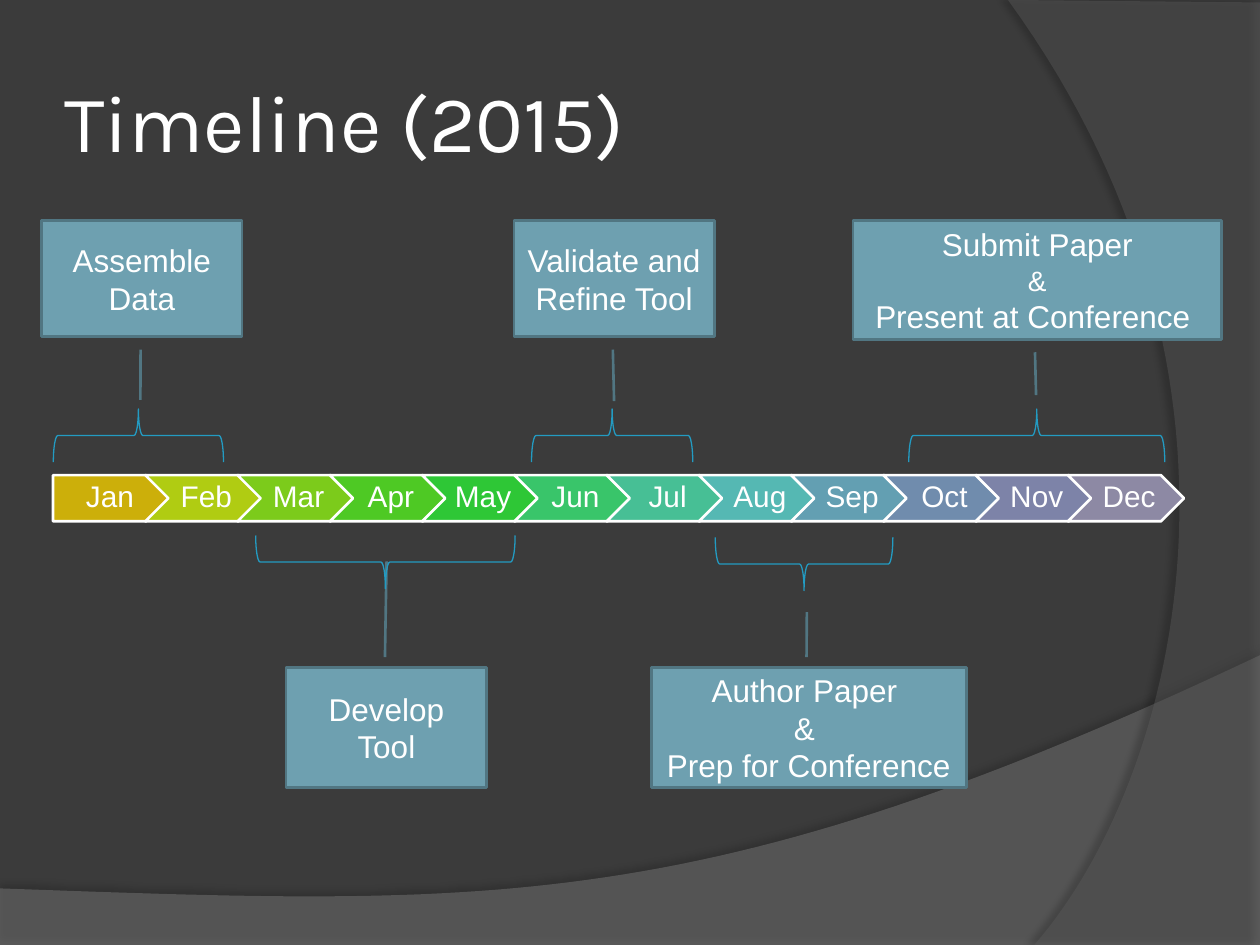
"""Draw a year of months as a row of arrows, with braces and callouts for each stage."""
from dataclasses import dataclass

from lxml import etree
from pptx import Presentation
from pptx import util as u
from pptx.dml import color
from pptx.enum import shapes, text
from pptx.oxml import ns

KIND = shapes.MSO_SHAPE
WHITE = "FFFFFF"
MONTHS = {
    "Jan": "CCAF0A", "Feb": "B0CC12", "Mar": "7CCB1B", "Apr": "4EC924",
    "May": "2EC736", "Jun": "39C56A", "Jul": "47BF95", "Aug": "55B8B3",
    "Sep": "639FB2", "Oct": "708CAD", "Nov": "7D83A8", "Dec": "8D89A4",
}
WIDE, HIGH = 25.4, 19.05
STEP = 1.86
DEPTH = 1.07

Point = tuple[float, float]


@dataclass
class Box:
    left: float
    top: float
    width: float
    height: float

    def cm(self) -> list[u.Cm]:
        return [u.Cm(n) for n in (self.left, self.top, self.width, self.height)]


@dataclass
class Brace:
    mid: float
    level: float
    span: float
    turn: int


@dataclass
class Stage:
    lines: list[str]
    box: Box
    lead: list[float]
    brace: Brace
    small: int = 18


@dataclass
class Wave:
    edge: list[Point]
    curve: list[Point]
    fill: str
    solid: int
    shade: int
    gap: float
    angle: int


WAVES = [
    Wave([(0, HIGH), (WIDE, HIGH)],
         [(WIDE, 13.21), (14.2, 18.52), (9.93, 18.26), (0, 17.91)],
         "7F7F7F", 45, 35, 3.5, 270),
    Wave([(WIDE, 0.05), (WIDE, HIGH)],
         [(20.85, HIGH), (23.75, 15.72), (25.86, 7.62), (20.32, 0)],
         "5E5E5E", 40, 45, 4, 180),
]
STAGES = [
    Stage(["Assemble", "Data"], Box(0.84, 4.45, 4.04, 2.34),
          [1.11, 0.494, 1.544, 0.493], Brace(2.79, 8.78, 3.43, 90)),
    Stage(["Develop", "Tool"], Box(5.77, 13.46, 4.04, 2.41),
          [-0.89, 0.501, -0.088, 0.493], Brace(7.77, 11.33, 5.23, 270)),
    Stage(["Validate and Refine Tool"], Box(10.36, 4.45, 4.04, 2.34),
          [1.11, 0.494, 1.555, 0.5], Brace(12.34, 8.78, 3.25, 90)),
    Stage(["Author Paper ", "& ", "Prep for Conference"], Box(13.13, 13.46, 6.35, 2.41),
          [-0.464, 0.494, -0.088, 0.493], Brace(16.21, 11.37, 3.58, 270)),
    Stage(["Submit Paper", " & ", "Present at Conference "], Box(17.2, 4.45, 7.42, 2.39),
          [1.11, 0.494, 1.472, 0.497], Brace(20.9, 8.78, 5.16, 90), small=16),
]


def paint(part, tint: str) -> None:
    if hasattr(part, "solid"):
        part.solid()
        part = part.fore_color
    part.rgb = color.RGBColor.from_string(tint)


def fade(node, share: int) -> None:
    etree.SubElement(node, ns.qn("a:alpha"), val=str(share * 1000))


def write(frame, lines: list[str], size: float, font: str = "Arial", small: float = 0):
    frame.vertical_anchor = text.MSO_ANCHOR.MIDDLE
    para = frame.paragraphs[0]
    for row, line in enumerate(lines):
        if row:
            para.add_line_break()
        run = para.add_run()
        run.text = line
        run.font.name = font
        run.font.size = u.Pt(small if small and "&" in line else size)
        paint(run.font.color, WHITE)
    return para


def add(slide, kind, box: Box, fill: str | None, line: str, width: float):
    shape = slide.shapes.add_shape(kind, *box.cm())
    shape.shadow.inherit = False
    if fill:
        paint(shape.fill, fill)
    else:
        shape.fill.background()
    paint(shape.line.color, line)
    shape.line.width = u.Pt(width)
    return shape


def add_wave(slide, wave: Wave, steps: int = 60) -> None:
    def spot(t: float) -> Point:
        parts = [(1 - t) ** 3, 3 * t * (1 - t) ** 2, 3 * t * t * (1 - t), t ** 3]
        x, y = (sum(p * c[i] for p, c in zip(parts, wave.curve)) for i in (0, 1))
        return x, y

    dots = wave.edge + [spot(n / steps) for n in range(steps + 1)]
    first, *rest = [(u.Cm(x), u.Cm(y)) for x, y in dots]
    path = slide.shapes.build_freeform(*first)
    path.add_line_segments(rest, close=True)
    shape = path.convert_to_shape()
    shape.shadow.inherit = False
    shape.line.fill.background()
    paint(shape.fill, wave.fill)
    props = shape._element.spPr
    fade(props.find(".//" + ns.qn("a:solidFill"))[0], wave.solid)
    shade = etree.SubElement(
        props.find(ns.qn("a:effectLst")), ns.qn("a:outerShdw"), blurRad=str(u.Pt(4)),
        dist=str(u.Pt(wave.gap)), dir=str(wave.angle * 60000), rotWithShape="0")
    fade(etree.SubElement(shade, ns.qn("a:srgbClr"), val="000000"), wave.shade)


def add_title(slide, words: str, box: Box) -> None:
    frame = slide.shapes.add_textbox(*box.cm()).text_frame
    frame.word_wrap = True
    frame.margin_left = frame.margin_right = u.Cm(0.13)
    write(frame, [words], 46, "Karla")


def add_month(slide, index: int, name: str, tint: str) -> None:
    kind = KIND.CHEVRON if index else KIND.PENTAGON
    box = Box(1.07 + index * STEP, 9.58, 2.34, 0.93)
    frame = add(slide, kind, box, tint, WHITE, 1.5).text_frame
    frame.word_wrap = False
    frame.margin_left = u.Cm(0.18 if index else 0.25)
    frame.margin_right = u.Cm(0.06)
    para = write(frame, [name], 17)
    para.alignment = text.PP_ALIGN.CENTER
    para.line_spacing = 0.9


def add_stage(slide, stage: Stage) -> None:
    note = add(slide, KIND.LINE_CALLOUT_1, stage.box, "6EA0B0", "517682", 1.5)
    for index, value in enumerate(stage.lead):
        note.adjustments[index] = value
    note.text_frame.word_wrap = True
    para = write(note.text_frame, stage.lines, 18, small=stage.small)
    para.alignment = text.PP_ALIGN.CENTER
    brace = stage.brace
    box = Box(brace.mid - DEPTH / 2, brace.level - brace.span / 2, DEPTH, brace.span)
    add(slide, KIND.LEFT_BRACE, box, None, "239BC2", 0.75).rotation = brace.turn


def main() -> None:
    deck = Presentation()
    deck.slide_width, deck.slide_height = u.Cm(WIDE), u.Cm(HIGH)
    slide = deck.slides.add_slide(deck.slide_layouts[6])
    paint(slide.background.fill, "3B3B3B")
    for wave in WAVES:
        add_wave(slide, wave)
    add_title(slide, "Timeline (2015)", Box(1.17, 0.84, 20.75, 3.18))
    for index, (name, tint) in enumerate(MONTHS.items()):
        add_month(slide, index, name, tint)
    for stage in STAGES:
        add_stage(slide, stage)
    deck.save("out.pptx")


if __name__ == "__main__":
    main()
